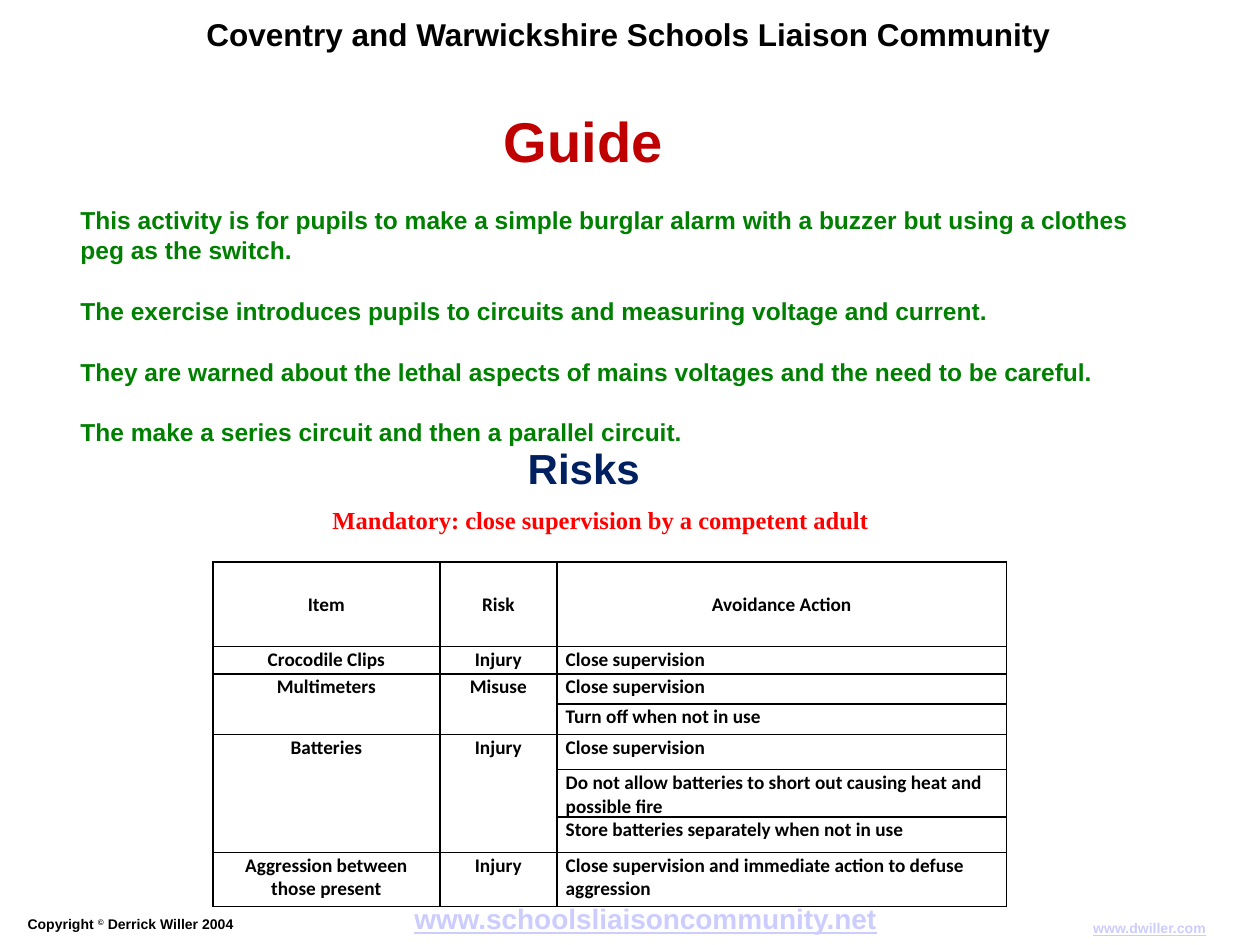
from lxml import etree
from pptx import Presentation
from pptx import util as u
from pptx.dml.color import RGBColor
from pptx.enum import text
from pptx.oxml import ns

BLACK = RGBColor(0x00, 0x00, 0x00)
RED = RGBColor(0xFF, 0x00, 0x00)
CRIMSON = RGBColor(0xC0, 0x00, 0x00)
GREEN = RGBColor(0x00, 0x80, 0x00)
NAVY = RGBColor(0x00, 0x20, 0x60)
LILAC = RGBColor(0xCC, 0xCC, 0xFF)

COLUMNS, ROWS = 100, 75
UNIT = u.Inches(0.1)
LEFT, CENTER, RIGHT = (text.PP_ALIGN.LEFT, text.PP_ALIGN.CENTER,
                       text.PP_ALIGN.RIGHT)

GUIDE = [
    "This activity is for pupils to make a simple burglar alarm with a buzzer "
    "but using a clothes peg as the switch.",
    "The exercise introduces pupils to circuits and measuring voltage and current.",
    "They are warned about the lethal aspects of mains voltages and the need to "
    "be careful.",
    "The make a series circuit and then a parallel circuit.",
]
HEADINGS = ("Item", "Risk", "Avoidance Action")
RISKS = [
    ("Crocodile Clips", "Injury", ["Close supervision"]),
    ("Multimeters", "Misuse", ["Close supervision", "Turn off when not in use"]),
    ("Batteries", "Injury", [
        "Close supervision",
        "Do not allow batteries to short out causing heat and possible fire",
        "Store batteries separately when not in use"]),
    ("Aggression between those present", "Injury",
     ["Close supervision and immediate action to defuse aggression"]),
]
COLUMN_WIDTHS = (18, 9.3, 35.7)
ROW_HEIGHTS = (6.7, 2.2, 2.4, 2.4, 2.8, 2.8, 2.8, 4.3)


def grid(*counts):
    """Turn counts of grid units into lengths."""
    return [u.Emu(int(count * UNIT)) for count in counts]


def apply(target, values):
    for name, value in values.items():
        setattr(target, name, value)


def add_span(para, words, size, color, font="Arial", underline=False):
    span = para.add_run()
    span.text = words
    apply(span.font, {"name": font, "size": u.Pt(size), "bold": True,
                      "underline": underline})
    span.font.color.rgb = color
    return span


def add_box(page, place, wrap=True):
    frame = page.shapes.add_textbox(*grid(*place)).text_frame
    apply(frame, {"word_wrap": wrap,
                  "auto_size": text.MSO_AUTO_SIZE.SHAPE_TO_FIT_TEXT})
    return frame


def add_line(page, place, words, size, color, wrap=True, align=LEFT, **style):
    para = add_box(page, place, wrap).paragraphs[0]
    para.alignment = align
    add_span(para, words, size, color, **style)


def add_guide(page, place):
    frame = add_box(page, place)
    for index, words in enumerate(GUIDE):
        para = frame.add_paragraph() if index else frame.paragraphs[0]
        para.space_before = u.Pt(18 if index else 0)
        add_span(para, words, 14, GREEN)


def add_copyright(page, place):
    para = add_box(page, place).paragraphs[0]
    add_span(para, "Copyright ", 8, BLACK)
    symbol = add_span(para, "©", 8, BLACK)
    symbol._r.get_or_add_rPr().set("baseline", "30000")
    add_span(para, " Derrick Willer 2004", 8, BLACK)


def add_borders(cell):
    properties = cell._tc.get_or_add_tcPr()
    for index, side in enumerate(("lnL", "lnR", "lnT", "lnB")):
        line = etree.Element(ns.qn(f"a:{side}"), w=str(u.Pt(1)))
        fill = etree.SubElement(line, ns.qn("a:solidFill"))
        etree.SubElement(fill, ns.qn("a:srgbClr"), val=str(BLACK))
        properties.insert(index, line)


def fill_cell(cell, words, align, anchor=text.MSO_ANCHOR.TOP):
    cell.vertical_anchor = anchor
    para = cell.text_frame.paragraphs[0]
    para.alignment = align
    add_span(para, words, 11, BLACK, font="Calibri")


def add_risk_table(page, left, top):
    shape = page.shapes.add_table(
        len(ROW_HEIGHTS), len(COLUMN_WIDTHS),
        *grid(left, top, sum(COLUMN_WIDTHS), sum(ROW_HEIGHTS)))
    table = shape.table
    apply(table, {"first_row": False, "horz_banding": False})
    for column, width in zip(table.columns, grid(*COLUMN_WIDTHS)):
        column.width = width
    for row, height in zip(table.rows, grid(*ROW_HEIGHTS)):
        row.height = height
    margins = dict(zip(("margin_left", "margin_top", "margin_right",
                        "margin_bottom"), grid(0.7, 0.1, 0.7, 0)))
    for cell in table.iter_cells():
        apply(cell, margins)
        cell.fill.background()
        add_borders(cell)

    for column, words in enumerate(HEADINGS):
        fill_cell(table.cell(0, column), words, CENTER, text.MSO_ANCHOR.MIDDLE)
    first = 1
    for item, risk, actions in RISKS:
        last = first + len(actions) - 1
        for column, words in enumerate((item, risk)):
            if last > first:
                table.cell(first, column).merge(table.cell(last, column))
            fill_cell(table.cell(first, column), words, CENTER)
        for row, action in enumerate(actions, first):
            fill_cell(table.cell(row, 2), action, LEFT)
        first = last + 1


def main():
    deck = Presentation()
    deck.slide_width, deck.slide_height = grid(COLUMNS, ROWS)
    page = deck.slides.add_slide(deck.slide_layouts[6])

    add_copyright(page, (1.2, 72.2, 56.5, 2.4))
    add_line(page, (83.3, 72.5, 13.4, 2.4), "www.dwiller.com", 8, LILAC,
             align=RIGHT, underline=True)
    add_line(page, (15.4, 0.7, 76.1, 4),
             "Coventry and Warwickshire Schools Liaison Community", 18, BLACK)
    add_line(page, (31.9, 71.1, 40.2, 3.7), "www.schoolsliaisoncommunity.net",
             16, LILAC, underline=True)
    add_line(page, (39, 8, 14.7, 6.4), "Guide", 32, CRIMSON, wrap=False)
    add_guide(page, (5.4, 15.8, 89.1, 19.9))
    add_line(page, (40.9, 34.6, 11, 5), "Risks", 24, NAVY, wrap=False)
    add_risk_table(page, 16.9, 44.6)
    add_line(page, (25.4, 39.6, 46.1, 3.4),
             "Mandatory: close supervision by a competent adult", 14, RED,
             wrap=False, font="Times New Roman")
    deck.save("out.pptx")


if __name__ == "__main__":
    main()
